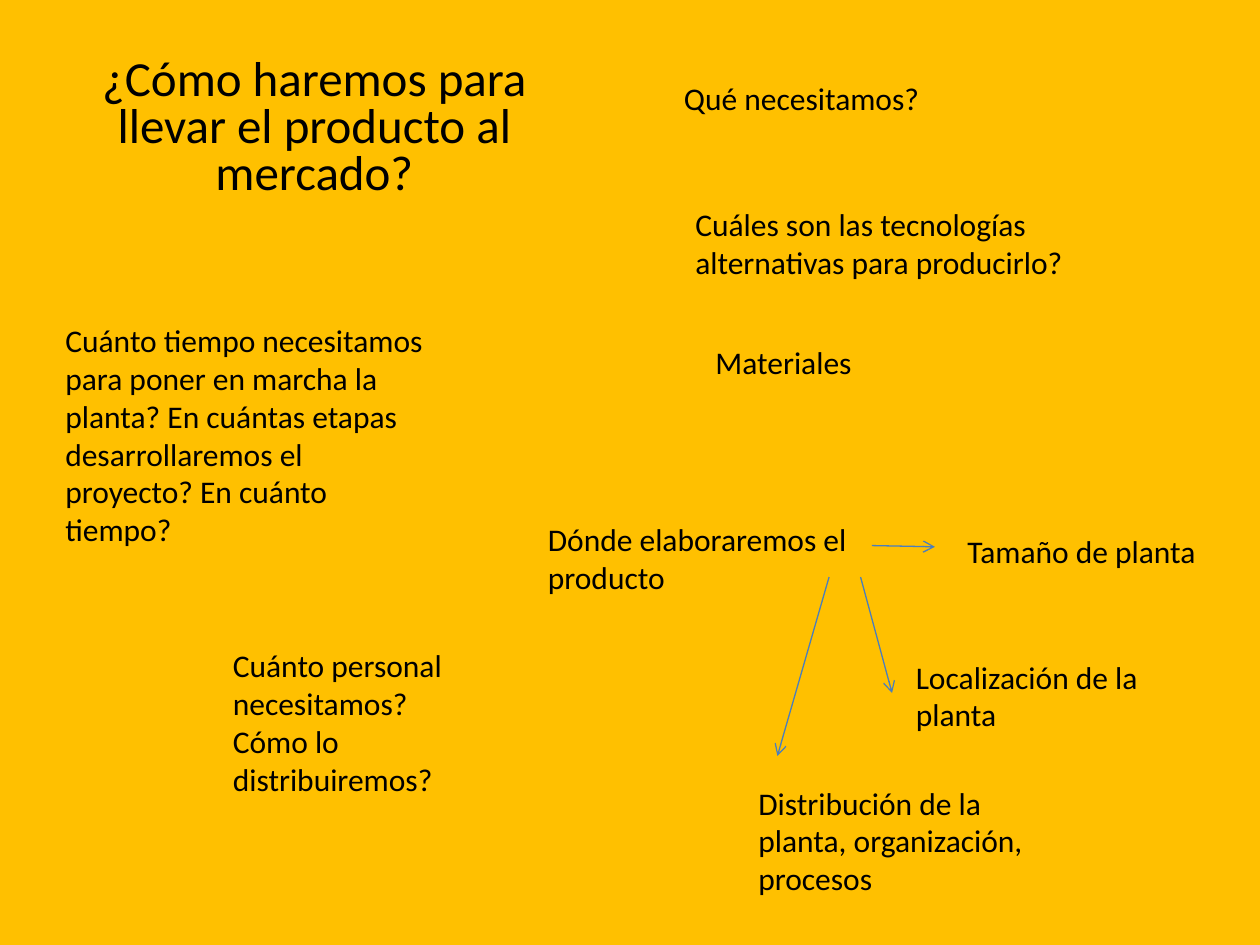
from lxml import etree
from pptx import Presentation
from pptx.dml.color import RGBColor
from pptx.enum import shapes, text
from pptx.oxml.ns import qn
from pptx.util import Inches, Pt

AMBER = RGBColor(0xFF, 0xC0, 0x00)
BLACK = RGBColor(0x00, 0x00, 0x00)
BLUE = RGBColor(0x4B, 0x7E, 0xBC)

TITLE = "¿Cómo haremos para llevar el producto al mercado?"

# left, top, width, height, wording
QUESTIONS = [
    (5.33, 0.58, 3.25, 0.4, "Qué necesitamos?"),
    (5.42, 1.58, 3.25, 0.71,
     "Cuáles son las tecnologías alternativas para producirlo?"),
    (5.58, 2.67, 3.25, 0.4, "Materiales"),
    (4.25, 4.08, 3.25, 0.71, "Dónde elaboraremos el producto"),
    (7.58, 4.17, 2.17, 0.4, "Tamaño de planta"),
    (7.17, 5.17, 2.17, 0.71, "Localización de la planta"),
    (1.75, 5.08, 2.17, 1.31,
     "Cuánto personal necesitamos? Cómo lo distribuiremos?"),
    (5.92, 6.17, 2.58, 1.01,
     "Distribución de la planta, organización, procesos"),
    (0.42, 2.5, 3.08, 1.92,
     "Cuánto tiempo necesitamos para poner en marcha la planta? "
     "En cuántas etapas desarrollaremos el proyecto? En cuánto tiempo?"),
]

# start x, start y, end x, end y
ARROWS = [
    (6.92, 4.33, 7.42, 4.34),
    (6.83, 4.58, 7.08, 5.5),
    (6.58, 4.58, 6.17, 6),
]


def add_text(s, box, wording, size=18):
    """Add a wrapped text box and return its paragraph."""
    tf = s.shapes.add_textbox(*map(Inches, box)).text_frame
    tf.word_wrap = True
    p = tf.paragraphs[0]
    r = p.add_run()
    r.text = wording
    r.font.name = "Calibri"
    r.font.size = Pt(size)
    r.font.color.rgb = BLACK
    return p


def add_title(s):
    p = add_text(s, (0.58, 0.42, 3.83, 1.33), TITLE, 28)
    p.alignment = text.PP_ALIGN.CENTER
    p.line_spacing = 0.8
    p.space_before = Pt(5.6)


def add_question(s, *box, wording):
    p = add_text(s, box, wording)
    p._parent.auto_size = text.MSO_AUTO_SIZE.SHAPE_TO_FIT_TEXT


def add_arrow(s, *ends):
    sp = s.shapes.add_connector(shapes.MSO_CONNECTOR.STRAIGHT,
                                *map(Inches, ends))
    sp.line.color.rgb = BLUE
    sp.line.width = Pt(0.75)
    etree.SubElement(sp.line._get_or_add_ln(), qn("a:tailEnd"), type="arrow")
    etree.SubElement(sp._element.spPr, qn("a:effectLst"))


def main():
    prs = Presentation()
    prs.slide_width, prs.slide_height = Inches(10), Inches(7.5)
    s = prs.slides.add_slide(prs.slide_layouts[6])
    s.background.fill.solid()
    s.background.fill.fore_color.rgb = AMBER

    add_title(s)
    for *box, wording in QUESTIONS:
        add_question(s, *box, wording=wording)
    for ends in ARROWS:
        add_arrow(s, *ends)
    prs.save("out.pptx")


if __name__ == "__main__":
    main()
